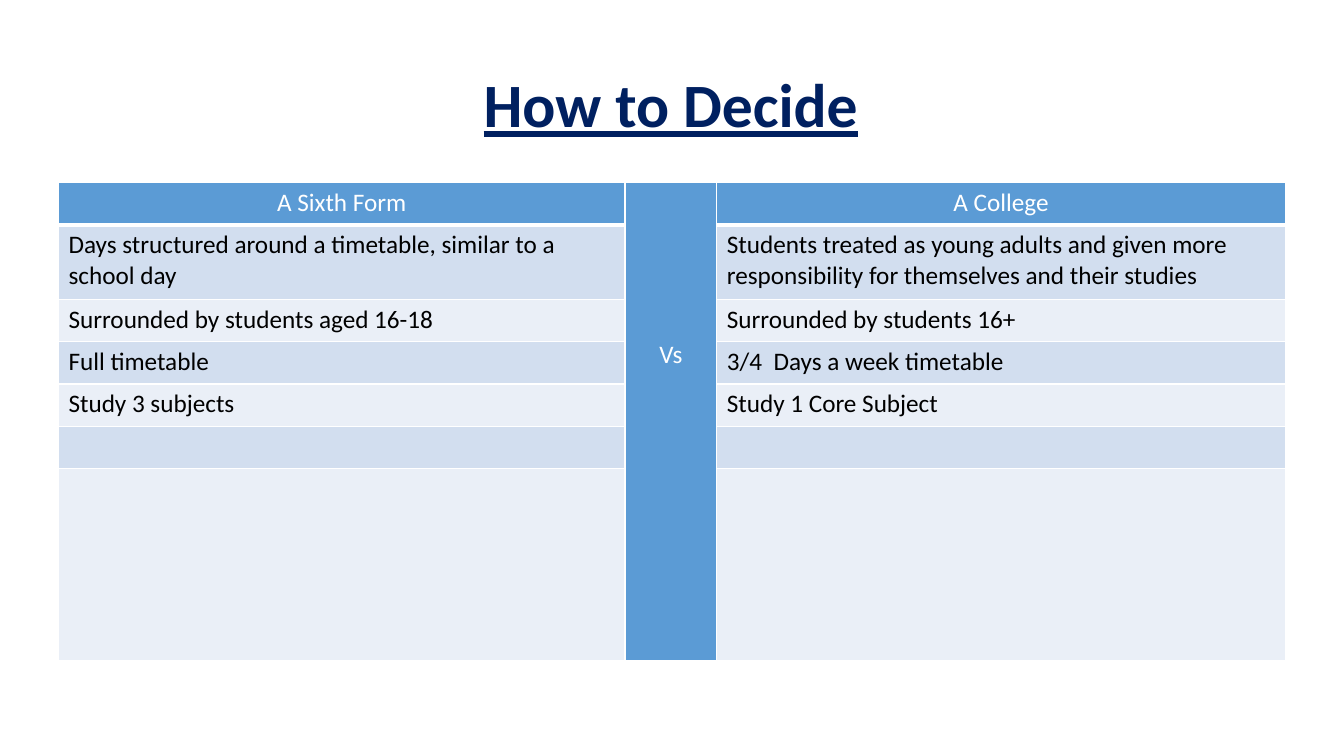
from lxml.etree import SubElement
from pptx import Presentation
from pptx.dml.color import RGBColor
from pptx.enum.text import MSO_ANCHOR, MSO_AUTO_SIZE, PP_ALIGN
from pptx.oxml.ns import qn
from pptx.util import Inches, Pt

BLUE, PALE, PALER = "5B9BD5", "D2DEEF", "EAEFF7"
WHITE, BLACK, NAVY = "FFFFFF", "000000", "002060"

COLUMN_WIDTHS = [5.62, 0.91, 5.64]
ROW_HEIGHTS = [0.42, 0.74, 0.42, 0.42, 0.42, 0.42, 1.91]
COMPARISON = [
    ("A Sixth Form", "A College"),
    ("Days structured around a timetable, similar to a school day",
     "Students treated as young adults and given more responsibility "
     "for themselves and their studies"),
    ("Surrounded by students aged 16-18", "Surrounded by students 16+"),
    ("Full timetable", "3/4  Days a week timetable"),
    ("Study 3 subjects", "Study 1 Core Subject"),
    ("", ""),
    ("", ""),
]


def color(value):
    return RGBColor.from_string(value)


class SlideBuilder:
    font_name = "Calibri"

    def __init__(self, deck):
        self.slide = deck.slides.add_slide(deck.slide_layouts[5])

    def fill_paragraph(self, para, text, shade, alignment=PP_ALIGN.LEFT, **formats):
        para.alignment = alignment
        span = para.add_run() if text else para
        if text:
            span.text = text
        for name, value in {"name": self.font_name, **formats}.items():
            setattr(span.font, name, value)
        span.font.color.rgb = color(shade)

    def title(self, text, left, top, width, height):
        box = self.slide.shapes.title
        place = dict(left=left, top=top, width=width, height=height)
        for name, value in place.items():
            setattr(box, name, Inches(value))
        frame = box.text_frame
        frame.word_wrap = False
        frame.auto_size = MSO_AUTO_SIZE.SHAPE_TO_FIT_TEXT
        self.fill_paragraph(frame.paragraphs[0], text, NAVY, PP_ALIGN.CENTER,
                            size=Pt(44), bold=True, underline=True)

    def border(self, cell, **widths):
        """Draw white cell borders, given in points by side."""
        properties = cell._tc.get_or_add_tcPr()
        for side in "LRTB":
            line = SubElement(properties, qn(f"a:ln{side}"), w=str(Pt(widths.get(side, 1))))
            fill = SubElement(line, qn("a:solidFill"))
            SubElement(fill, qn("a:srgbClr"), val=WHITE)

    def cell(self, cell, text, fill, shade, alignment, **widths):
        self.border(cell, **widths)
        cell.fill.solid()
        cell.fill.fore_color.rgb = color(fill)
        self.fill_paragraph(cell.text_frame.paragraphs[0], text, shade, alignment,
                            size=Pt(18))

    def comparison_table(self, rows, left, top):
        table = self.slide.shapes.add_table(
            len(rows), len(COLUMN_WIDTHS), Inches(left), Inches(top),
            Inches(sum(COLUMN_WIDTHS)), Inches(sum(ROW_HEIGHTS))).table
        for column, width in zip(table.columns, COLUMN_WIDTHS):
            column.width = Inches(width)
        for row, height in zip(table.rows, ROW_HEIGHTS):
            row.height = Inches(height)

        for index, (sixth_form, college) in enumerate(rows):
            if index == 0:
                look = (BLUE, WHITE, PP_ALIGN.CENTER)
                widths = {"B": 3}
            else:
                look = (PALE if index % 2 else PALER, BLACK, PP_ALIGN.LEFT)
                widths = {"T": 3} if index == 1 else {}
            self.cell(table.cell(index, 0), sixth_form, *look, **widths)
            self.cell(table.cell(index, 2), college, *look, **widths)

        divider = table.cell(0, 1)
        divider.merge(table.cell(len(rows) - 1, 1))
        self.cell(divider, "Vs", BLUE, WHITE, PP_ALIGN.CENTER)
        divider.vertical_anchor = MSO_ANCHOR.TOP
        divider.margin_top = Inches(1.56)


def main():
    deck = Presentation()
    deck.slide_width, deck.slide_height = Inches(13.33), Inches(7.5)
    builder = SlideBuilder(deck)
    builder.title("How to Decide", 4.68, 0.6, 3.95, 0.84)
    builder.comparison_table(COMPARISON, 0.58, 1.81)
    deck.save("out.pptx")


if __name__ == "__main__":
    main()
